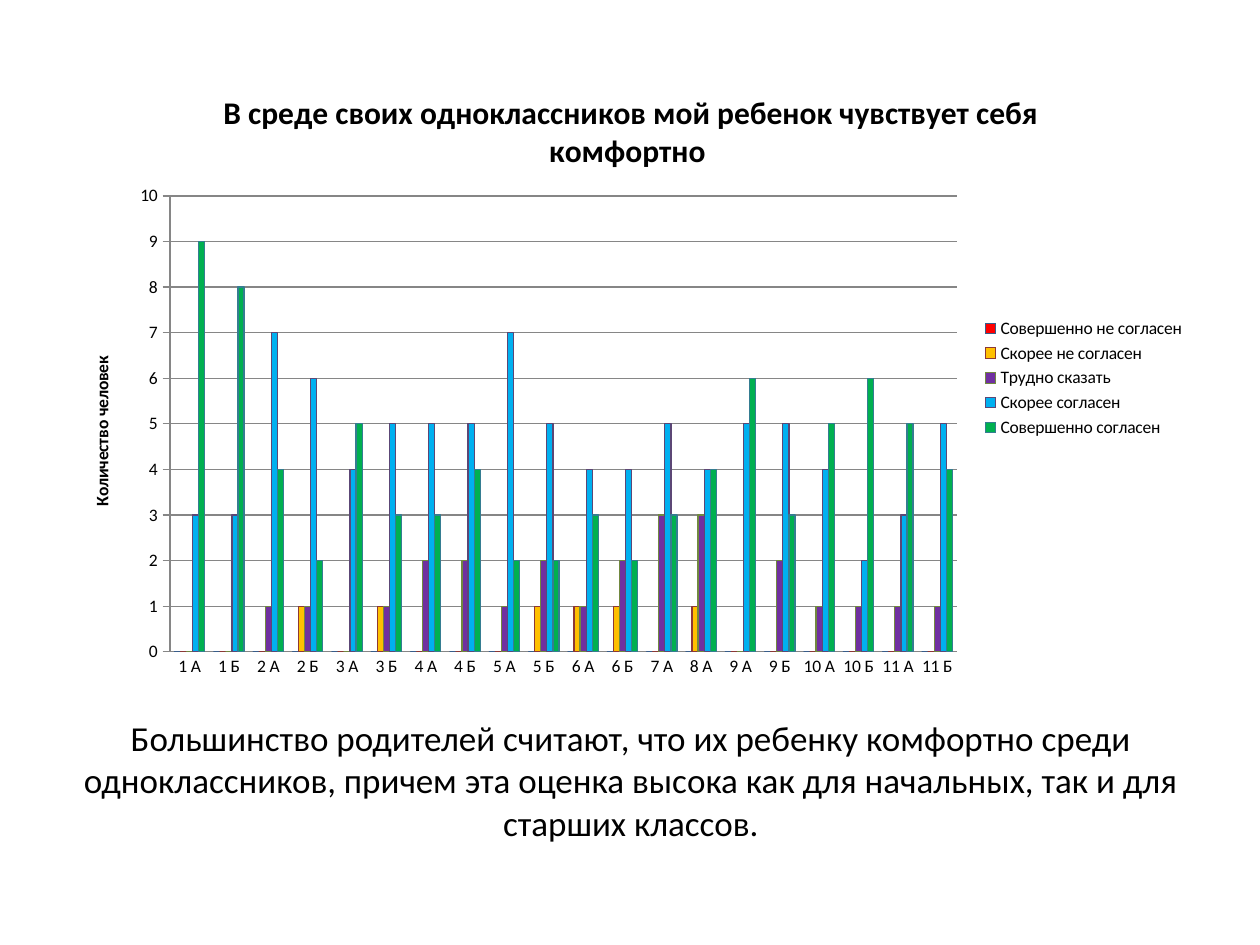
from lxml import etree
from pptx import Presentation
from pptx.chart.data import CategoryChartData
from pptx.dml.color import RGBColor
from pptx.enum.chart import XL_CHART_TYPE as Kind, XL_LEGEND_POSITION as Side, XL_TICK_MARK as Tick
from pptx.enum.text import MSO_ANCHOR as Anchor, PP_ALIGN as Align
from pptx.util import Pt

SCALE = 914400 / 126
GRADES = ("1 А,1 Б,2 А,2 Б,3 А,3 Б,4 А,4 Б,5 А,5 Б,6 А,6 Б,7 А,8 А,"
          "9 А,9 Б,10 А,10 Б,11 А,11 Б").split(",")
# Answer, votes per class, fill, outline
ANSWERS = [
    ("Совершенно не согласен", [0] * len(GRADES), "FF0000", "385D8A"),
    ("Скорее не согласен", [0, 0, 0, 1, 0, 1, 0, 0, 0, 1, 1, 1, 0, 1, 0, 0, 0, 0, 0, 0],
     "FFC000", "8C3836"),
    ("Трудно сказать", [0, 0, 1, 1, 0, 1, 2, 2, 1, 2, 1, 2, 3, 3, 0, 2, 1, 1, 1, 1],
     "7030A0", "71893F"),
    ("Скорее согласен", [3, 3, 7, 6, 4, 5, 5, 5, 7, 5, 4, 4, 5, 4, 5, 5, 4, 2, 3, 5],
     "00B0F0", "5C4776"),
    ("Совершенно согласен", [9, 8, 4, 2, 5, 3, 3, 4, 2, 2, 3, 2, 3, 4, 6, 3, 5, 6, 5, 4],
     "00B050", "357D91"),
]


def px(n):
    return round(n * SCALE)


def rgb(code):
    return RGBColor.from_string(code)


class Deck:
    font, ink, grid = "Calibri", "000000", "868686"

    def __init__(self, wide, high):
        self.prs = Presentation()
        self.prs.slide_width, self.prs.slide_height = px(wide), px(high)
        self.slide = self.prs.slides.add_slide(self.prs.slide_layouts[6])

    def style(self, font, size, bold=False):
        font.name, font.size, font.bold = self.font, Pt(size), bold
        font.color.rgb = rgb(self.ink)

    def stroke(self, line, code):
        line.color.rgb, line.width = rgb(code), Pt(0.75)

    def label(self, owner, text, size):
        para = owner.text_frame.paragraphs[0]
        para.text = text
        self.style(para.runs[0].font, size, True)

    def text(self, words, box, size):
        frame = self.slide.shapes.add_textbox(*map(px, box)).text_frame
        frame.word_wrap, frame.vertical_anchor = True, Anchor.MIDDLE
        frame.text = words
        para = frame.paragraphs[0]
        para.alignment = Align.CENTER
        self.style(para.runs[0].font, size)

    def columns(self, title, unit, box, plot):
        data = CategoryChartData()
        data.categories = GRADES
        for name, votes, *_ in ANSWERS:
            data.add_series(name, votes)
        chart = self.slide.shapes.add_chart(
            Kind.COLUMN_CLUSTERED, *map(px, box), data).chart
        self.style(chart.font, 10)
        chart.has_title = True
        self.label(chart.chart_title, title, 18)
        chart.chart_title.include_in_layout = False

        # Legend
        chart.has_legend = True
        chart.legend.position = Side.RIGHT
        chart.legend.include_in_layout = False

        # Columns
        bars = chart.plots[0]
        bars.gap_width, bars.overlap, bars.vary_by_categories = 150, 0, False
        for series, (_, _, fill, edge) in zip(bars.series, ANSWERS):
            series.format.fill.solid()
            series.format.fill.fore_color.rgb = rgb(fill)
            self.stroke(series.format.line, edge)

        # Axes
        cat, val = chart.category_axis, chart.value_axis
        cat.major_tick_mark, val.major_tick_mark = Tick.NONE, Tick.OUTSIDE
        val.minimum_scale, val.maximum_scale, val.major_unit = 0, 10, 1
        val.has_major_gridlines = True
        for line in (cat.format.line, val.format.line, val.major_gridlines.format.line):
            self.stroke(line, self.grid)
        self.label(val.axis_title, unit, 10)

        # Place of the inner plot area, in shares of the chart
        area = chart.plots[0]._element.getparent()
        for old in area.findall("{*}layout"):
            area.remove(old)
        space = etree.QName(area).namespace
        layout = etree.Element(f"{{{space}}}layout")
        manual = etree.SubElement(layout, f"{{{space}}}manualLayout")
        left, top, wide, high = box
        x, y, w, h = plot
        marks = dict(layoutTarget="inner", xMode="edge", yMode="edge",
                     x=round((x - left) / wide, 4), y=round((y - top) / high, 4),
                     w=round(w / wide, 4), h=round(h / high, 4))
        for tag, mark in marks.items():
            etree.SubElement(manual, f"{{{space}}}{tag}").set("val", str(mark))
        area.insert(0, layout)


def main():
    deck = Deck(1260, 945)
    # Conclusion
    deck.text("Большинство родителей считают, что их ребенку комфортно среди "
              "одноклассников, причем эта оценка высока как для начальных, "
              "так и для старших классов.", (64, 701, 1134, 158), 20)
    # Survey chart
    deck.columns("В среде своих одноклассников мой ребенок чувствует себя комфортно ",
                 "Количество человек", (64, 66, 1134, 624), (170, 196, 787, 456))
    deck.prs.save("out.pptx")


if __name__ == "__main__":
    main()
